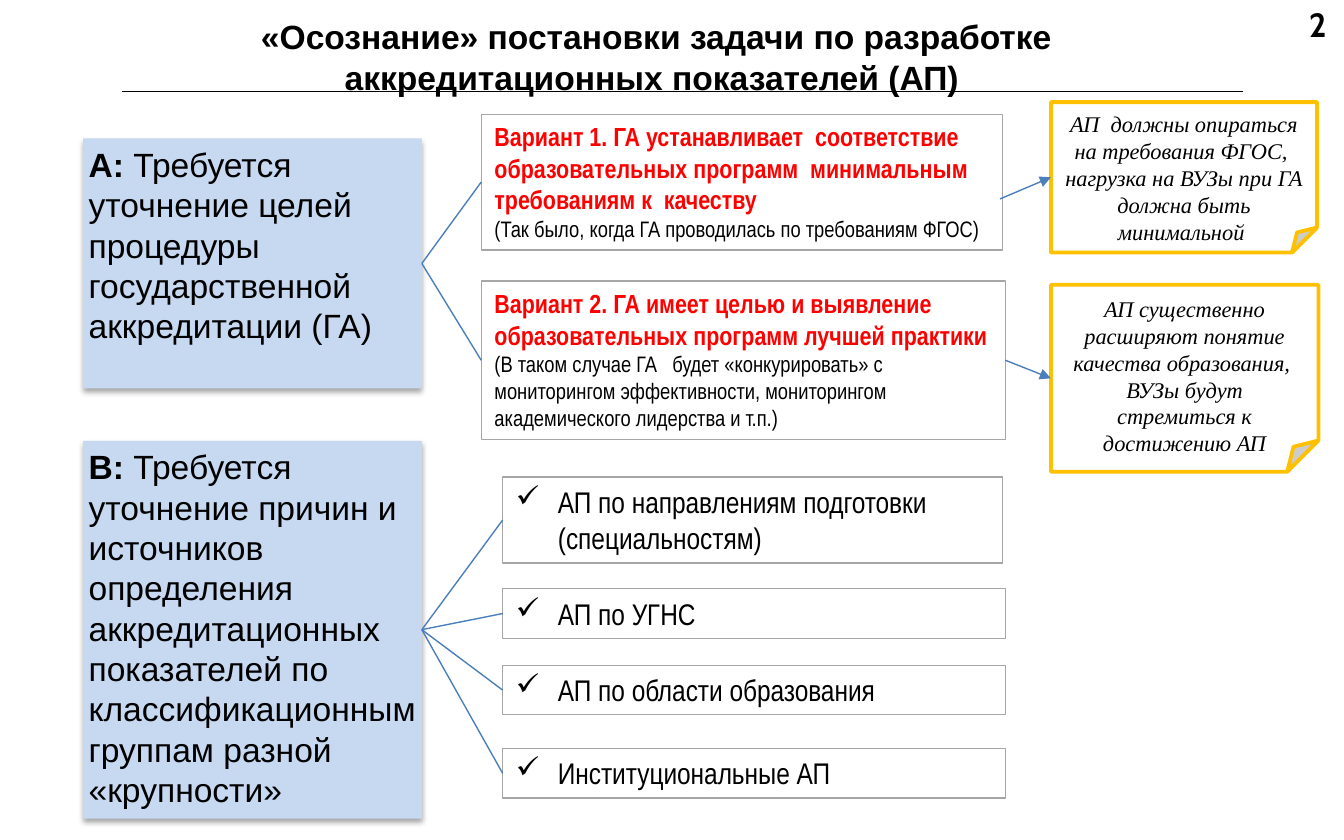
import pptx
import pptx.dml.color
import pptx.enum.shapes
import pptx.enum.text
import pptx.oxml
import pptx.oxml.ns
import pptx.util
from pptx.util import Pt

RGB = pptx.dml.color.RGBColor
SHAPE = pptx.enum.shapes.MSO_SHAPE
STRAIGHT = pptx.enum.shapes.MSO_CONNECTOR.STRAIGHT
ALIGN = pptx.enum.text.PP_ALIGN
ANCHOR = pptx.enum.text.MSO_ANCHOR

BLACK = RGB(0x00, 0x00, 0x00)
WHITE = RGB(0xFF, 0xFF, 0xFF)
RED = RGB(0xFF, 0x00, 0x00)
PALE_BLUE = RGB(0xC6, 0xD9, 0xF1)
LINK_BLUE = RGB(0x4B, 0x7E, 0xBC)
GREY = RGB(0xA6, 0xA6, 0xA6)
AMBER = RGB(0xFF, 0xC0, 0x00)

LEFT, RIGHT = 1, 3  # connection sites

VARIANTS = [
    ((257.8, 61.2, 279.4, 72.7),
     "Вариант 1. ГА устанавливает  соответствие образовательных программ  "
     "минимальным требованиям к  качеству",
     "(Так было, когда ГА проводилась по требованиям ФГОС)"),
    ((257.8, 150.5, 280.8, 85),
     "Вариант 2. ГА имеет целью и выявление образовательных программ лучшей практики",
     "(В таком случае ГА   будет «конкурировать» с мониторингом эффективности, "
     "мониторингом академического лидерства и т.п.)"),
]
NOTES = [
    ((563, 54.7, 142.6, 80.6),
     ["АП  должны опираться на требования ФГОС, ",
      "нагрузка на ВУЗы при ГА должна быть минимальной "]),
    ((563, 152.6, 143.3, 100.1),
     ["АП существенно расширяют понятие качества образования, ",
      "ВУЗы будут стремиться к достижению АП"]),
]
GROUPS = [
    ((269.3, 255.6, 267.8, 46), "АП по направлениям подготовки (специальностям)"),
    ((269.3, 315.4, 269.3, 26.6), "АП по УГНС"),
    ((269.3, 356.4, 269.3, 26.6), "АП по области образования"),
    ((269.3, 401, 269.3, 26.6), "Институциональные АП"),
]


def xml(tag, inner="", attributes=""):
    namespace = pptx.oxml.ns.nsdecls("a")
    return pptx.oxml.parse_xml(f"<a:{tag} {namespace} {attributes}>{inner}</a:{tag}>")


def style(run, font, size, color=BLACK, bold=False, italic=False):
    run.font.name = font
    run.font.size = Pt(size)
    run.font.color.rgb = color
    run.font.bold = bold
    run.font.italic = italic


def add_box(slide, box, fill=None, outline=None, width=0.75, preset=SHAPE.RECTANGLE):
    shape = slide.shapes.add_shape(preset, *map(Pt, box))
    shape.shadow.inherit = False
    if fill is None:
        shape.fill.background()
    else:
        shape.fill.solid()
        shape.fill.fore_color.rgb = fill
    if outline is None:
        shape.line.fill.background()
    else:
        shape.line.color.rgb = outline
        shape.line.width = Pt(width)
    frame = shape.text_frame
    frame.word_wrap = True
    frame.vertical_anchor = ANCHOR.TOP
    frame.paragraphs[0].alignment = ALIGN.LEFT
    return shape


def add_line(slide, start, end, color=LINK_BLUE, arrow=False):
    line = slide.shapes.add_connector(STRAIGHT, *map(Pt, (*start, *end)))
    line.line.color.rgb = color
    line.line.width = Pt(0.75)
    if arrow:
        line.line._get_or_add_ln().append(xml("tailEnd", attributes='type="triangle"'))
    line._element.spPr.append(xml("effectLst"))
    return line


def join(slide, source, target, arrow=False):
    """Link the right side of source to the left side of target."""
    line = add_line(slide, (0, 0), (0, 0), arrow=arrow)
    line.begin_connect(source, RIGHT)
    line.end_connect(target, LEFT)


def add_centred_text(slide, box, text, font):
    textbox = slide.shapes.add_textbox(*map(Pt, box))
    frame = textbox.text_frame
    frame.word_wrap = True
    frame.text = text
    frame.paragraphs[0].alignment = ALIGN.CENTER
    style(frame.paragraphs[0].runs[0], font, 18, bold=True)
    return frame


def add_header(slide, box):
    left, top, width, height = box
    add_centred_text(slide, (683.3, -1.4, 45.4, 23.8), "2", "Cabin")
    add_line(slide, (left, top + 35.3), (left + 600.5, top + 35.3), BLACK)
    title = add_centred_text(
        slide, box,
        "«Осознание» постановки задачи по разработке аккредитационных показателей (АП) ",
        "Arial")
    title.vertical_anchor = ANCHOR.MIDDLE


def add_requirement(slide, box, letter, text):
    panel = add_box(slide, box, fill=PALE_BLUE)
    effects = panel._element.spPr.find(pptx.oxml.ns.qn("a:effectLst"))
    effects.append(xml(
        "outerShdw", '<a:srgbClr val="000000"><a:alpha val="35000"/></a:srgbClr>',
        f'blurRad="{Pt(3.1)}" dist="{Pt(1.8)}" dir="5400000" rotWithShape="0"'))
    frame = panel.text_frame
    frame.margin_left = frame.margin_right = Pt(2.9)
    frame.margin_top = frame.margin_bottom = Pt(2.9)
    for content, bold in ((letter, True), (text, False)):
        run = frame.paragraphs[0].add_run()
        run.text = content
        style(run, "Arial", 18, bold=bold)
    return panel


def add_variant(slide, box, headline, remark):
    variant = add_box(slide, box, outline=GREY)
    frame = variant.text_frame
    frame.text = f"{headline}\n{remark}"
    for paragraph in frame.paragraphs:
        paragraph.alignment = ALIGN.LEFT
    style(frame.paragraphs[0].runs[0], "Arial Narrow", 14, RED, bold=True)
    style(frame.paragraphs[1].runs[0], "Arial Narrow", 12)
    return variant


def add_note(slide, box, lines):
    note = add_box(slide, box, WHITE, AMBER, 2, SHAPE.FOLDED_CORNER)
    frame = note.text_frame
    frame.vertical_anchor = ANCHOR.MIDDLE
    frame.margin_top = Pt(17.4)  # balances the folded strip below the text
    frame.text = "\n".join(lines)
    for paragraph in frame.paragraphs:
        paragraph.alignment = ALIGN.CENTER
        style(paragraph.runs[0], "Times New Roman", 12, italic=True)
    return note


def add_group(slide, box, text):
    group = add_box(slide, box, outline=GREY)
    paragraph = group.text_frame.paragraphs[0]
    paragraph.text = text
    properties = paragraph._p.get_or_add_pPr()
    properties.set("marL", str(Pt(22.5)))
    properties.set("indent", str(Pt(-22.5)))
    properties.append(xml("buChar", attributes='char="✓"'))
    style(paragraph.runs[0], "Arial Narrow", 16)
    return group


def add_goals_branch(slide, box):
    goals = add_requirement(
        slide, box, "А: ",
        "Требуется уточнение целей процедуры государственной аккредитации (ГА)")
    variants = [add_variant(slide, *variant) for variant in VARIANTS]
    notes = [add_note(slide, *note) for note in NOTES]
    for variant in variants:
        join(slide, goals, variant)
    first_arrow = add_line(slide, (535.7, 106.6), (563, 95), arrow=True)
    first_arrow.end_connect(notes[0], LEFT)
    join(slide, variants[1], notes[1], arrow=True)


def add_groups_branch(slide, box):
    sources = add_requirement(
        slide, box, "B: ",
        "Требуется уточнение причин и источников определения аккредитационных "
        "показателей по классификационным группам разной «крупности»")
    for group in GROUPS:
        join(slide, sources, add_group(slide, *group))


def main():
    presentation = pptx.Presentation()
    presentation.slide_width = Pt(720)
    presentation.slide_height = Pt(450)
    slide = presentation.slides.add_slide(presentation.slide_layouts[6])
    add_header(slide, (65.5, 13.7, 572.4, 33.1))
    add_goals_branch(slide, (44.6, 74.2, 181.4, 133.9))
    add_groups_branch(slide, (44.6, 236.2, 181.4, 202.3))
    presentation.save("out.pptx")


if __name__ == "__main__":
    main()
